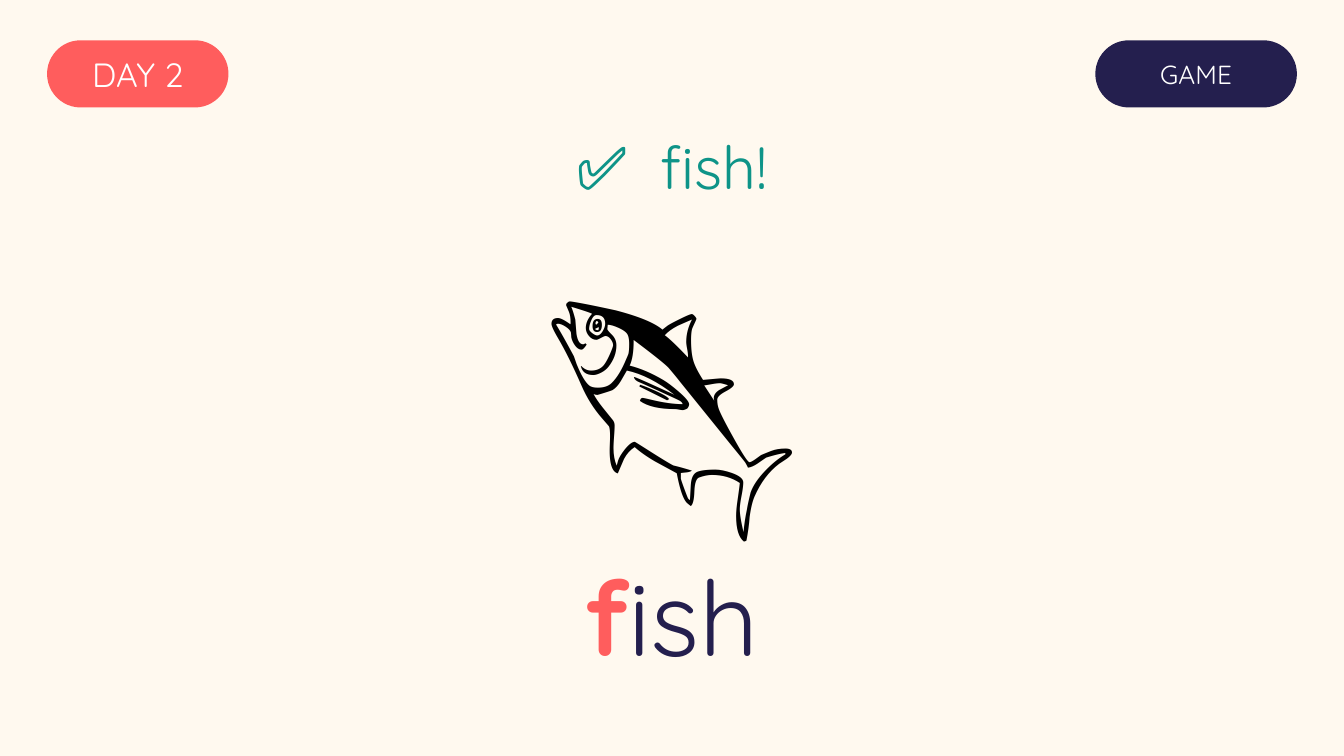
from pptx import Presentation
from pptx.dml.color import RGBColor
from pptx.enum.shapes import MSO_SHAPE as Shape
from pptx.enum.text import MSO_ANCHOR as Anchor, MSO_AUTO_SIZE as AutoSize, PP_ALIGN as Align
from pptx.util import Inches, Pt

COLORS = {
    "cream": "FFF9EF",
    "coral": "FF5D5D",
    "navy": "241F4E",
    "teal": "0E9488",
    "white": "FFFFFF",
    "black": "000000",
}
WIDTH = 10
HEIGHT = WIDTH * 9 / 16
MARGIN = 0.35


def color(name):
    """Return the named palette colour."""
    return RGBColor.from_string(COLORS[name])


def write(frame, runs, size, font="Quicksand", anchor=Anchor.MIDDLE, inset=(0.1, 0.05)):
    """Fill a frame with one centred line of (text, colour, bold, tracking) runs."""
    across, down = map(Inches, inset)
    layout = {
        "word_wrap": True,
        "auto_size": AutoSize.NONE,
        "vertical_anchor": anchor,
        "margin_left": across,
        "margin_right": across,
        "margin_top": down,
        "margin_bottom": down,
    }
    for key, value in layout.items():
        setattr(frame, key, value)
    line = frame.paragraphs[0]
    line.alignment = Align.CENTER
    for text, ink, bold, tracking in runs:
        run = line.add_run()
        run.text = text
        for key, value in {"name": font, "size": Pt(size), "bold": bold}.items():
            setattr(run.font, key, value)
        run.font.color.rgb = color(ink)
        if tracking:
            run.font._element.set("spc", str(tracking * 100))


def add_pill(slide, box, label, fill, size):
    """Draw a fully rounded label in the given box."""
    pill = slide.shapes.add_shape(Shape.ROUNDED_RECTANGLE, *map(Inches, box))
    pill.adjustments[0] = 0.5
    pill.shadow.inherit = False
    pill.fill.solid()
    pill.fill.fore_color.rgb = color(fill)
    pill.line.fill.background()
    write(pill.text_frame, [(label, "white", False, 0)], size, inset=(0, 0))


def add_header(slide, box):
    """Place the day pill at the left and the activity pill at the right of the box."""
    left, top, width, height = box
    day_width, game_width = 1.35, 1.5
    add_pill(slide, (left, top, day_width, height), "DAY 2", "coral", 18)
    add_pill(slide, (left + width - game_width, top, game_width, height), "GAME", "navy", 14)


def add_answer(slide, box):
    """Move the title into the box and write the confirmed answer."""
    answer = slide.shapes.title
    for key, value in zip(("left", "top", "width", "height"), box):
        setattr(answer, key, Inches(value))
    runs = [("✅", "teal", False, 0), (" ", "teal", False, 8), ("fish!", "teal", False, 0)]
    write(answer.text_frame, runs, 32)


def add_word_card(slide, box):
    """Stack the fish symbol above its word, with the first letter stressed."""
    left, top, width, height = box
    symbol_height, word_height = 2.1, 0.85
    symbol = slide.shapes.add_textbox(*map(Inches, (left, top, width, symbol_height)))
    write(symbol.text_frame, [("🐟", "black", False, 0)], 140, "Calibri", Anchor.TOP)
    word_top = top + height - word_height
    word = slide.shapes.add_textbox(*map(Inches, (left, word_top, width, word_height)))
    write(word.text_frame, [("f", "coral", True, 0), ("ish", "navy", False, 0)], 56)


def main():
    """Build and save the slide."""
    deck = Presentation()
    deck.slide_width, deck.slide_height = Inches(WIDTH), Inches(HEIGHT)
    slide = deck.slides.add_slide(deck.slide_layouts[5])
    slide.background.fill.solid()
    slide.background.fill.fore_color.rgb = color("cream")
    add_header(slide, (MARGIN, 0.3, WIDTH - 2 * MARGIN, 0.5))
    add_answer(slide, (0, 0.92, WIDTH, 0.62))
    add_word_card(slide, (0, 1.7, WIDTH, 3.3))
    deck.save("out.pptx")


if __name__ == "__main__":
    main()
